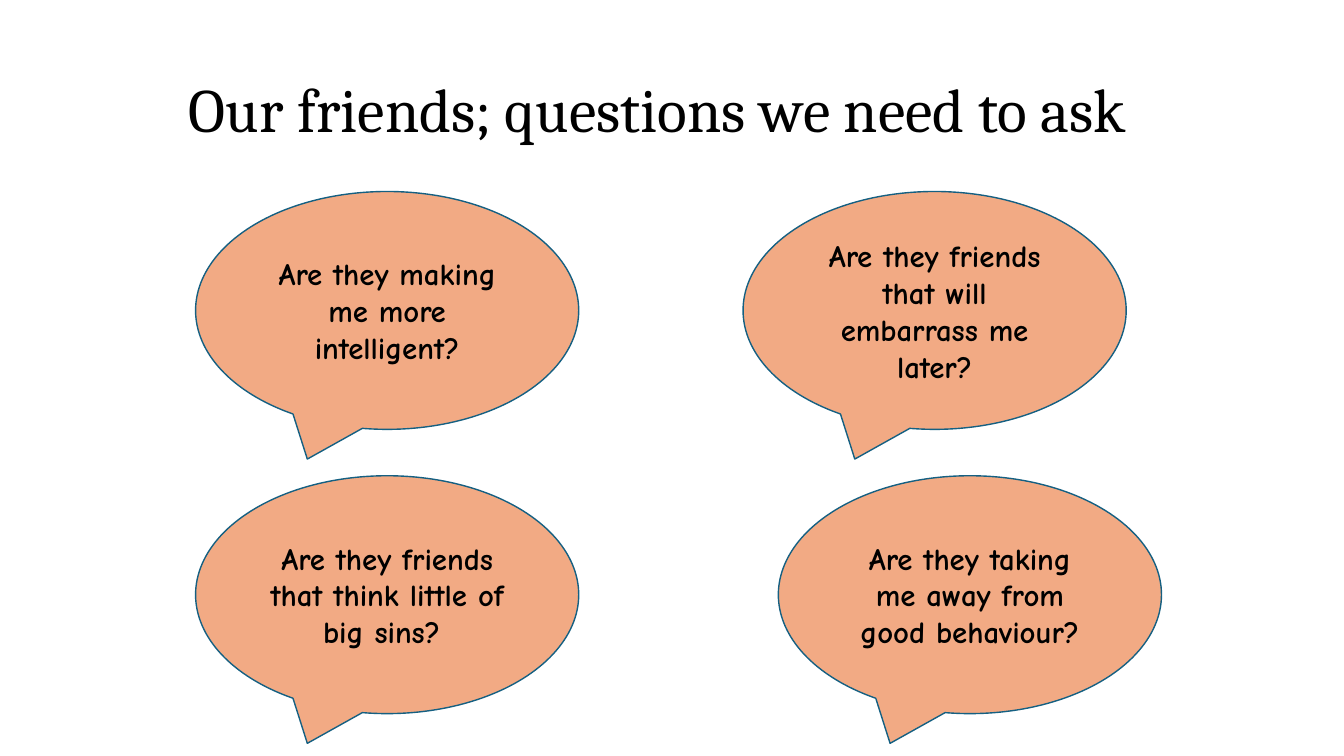
from pptx import Presentation
from pptx.dml.color import RGBColor
from pptx.enum.shapes import MSO_SHAPE
from pptx.enum.text import MSO_ANCHOR, PP_ALIGN
from pptx.util import Inches, Pt

COLORS = {"text": "000000", "bubble": "F2AA84", "outline": "156082"}
BUBBLE_WIDTH, BUBBLE_HEIGHT = 3.8, 2.36
LEFT_COLUMN, TOP_ROW, BOTTOM_ROW = 1.94, 1.9, 4.72

QUESTIONS = [
    (LEFT_COLUMN, TOP_ROW, "Are they making me more intelligent?"),
    (7.72, BOTTOM_ROW, "Are they taking me away from good behaviour?"),
    (LEFT_COLUMN, BOTTOM_ROW, "Are they friends that think little of big sins? "),
    (7.37, TOP_ROW, "Are they friends that will embarrass me later?"),
]


def color(name):
    return RGBColor.from_string(COLORS[name])


def write_centred(shape, text, font_name, size, bold=False):
    frame = shape.text_frame
    frame.word_wrap = True
    frame.vertical_anchor = MSO_ANCHOR.MIDDLE
    paragraph = frame.paragraphs[0]
    paragraph.text = text
    paragraph.alignment = PP_ALIGN.CENTER
    font = paragraph.font
    font.name, font.size, font.bold = font_name, Pt(size), bold
    font.color.rgb = color("text")
    return paragraph


def add_title(slide, text):
    title = slide.shapes.add_textbox(Inches(0.54), Inches(0.43), Inches(11.97), Inches(1.37))
    write_centred(title, text, "Cambria", 44).line_spacing = 0.9


def add_question_bubble(slide, left, top, question):
    bubble = slide.shapes.add_shape(
        MSO_SHAPE.OVAL_CALLOUT, Inches(left), Inches(top),
        Inches(BUBBLE_WIDTH), Inches(BUBBLE_HEIGHT))
    bubble.shadow.inherit = False
    bubble.fill.solid()
    bubble.fill.fore_color.rgb = color("bubble")
    bubble.line.color.rgb = color("outline")
    bubble.line.width = Pt(1)
    write_centred(bubble, question, "Comic Neue", 22, bold=True)


def main():
    deck = Presentation()
    deck.slide_width, deck.slide_height = Inches(13.33), Inches(7.5)
    slide = deck.slides.add_slide(deck.slide_layouts[6])
    add_title(slide, "Our friends; questions we need to ask")
    for left, top, question in QUESTIONS:
        add_question_bubble(slide, left, top, question)
    deck.save("out.pptx")


if __name__ == "__main__":
    main()
